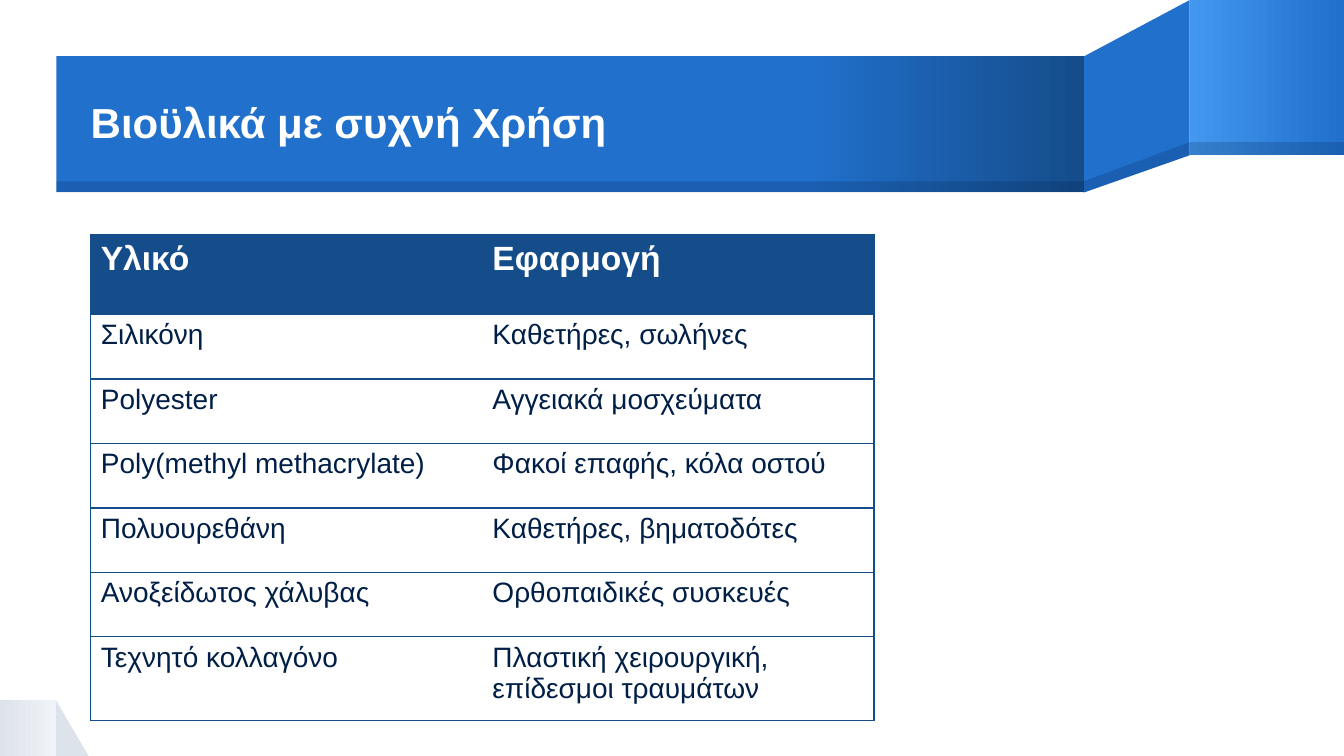
from dataclasses import dataclass

from lxml import etree
from pptx import Presentation
from pptx.dml.color import RGBColor
from pptx.enum.shapes import MSO_SHAPE as Shape
from pptx.enum.text import MSO_ANCHOR as Anchor
from pptx.oxml.ns import qn
from pptx.util import Inches, Pt


@dataclass(frozen=True)
class Theme:
    font: str = "Arial"
    white: str = "FFFFFF"
    blue: str = "2170CC"
    light_blue: str = "4397EE"
    dark_blue: str = "154C8A"
    navy: str = "001F46"
    gray: str = "DDE3EB"
    light_gray: str = "F0F3F7"
    title_size: int = 30
    header_size: int = 24
    body_size: int = 20
    shade_percent: int = 20
    border_width: int = 1


def add_color(parent, color):
    return etree.SubElement(parent, qn("a:srgbClr"), val=color)


class SlideBuilder:
    def __init__(self, slide, theme):
        self.slide = slide
        self.theme = theme

    def paint(self, shape, color, opacity=100):
        shape.shadow.inherit = False
        shape.line.fill.background()
        shape.fill.solid()
        shape.fill.fore_color.rgb = RGBColor.from_string(color)
        if opacity < 100:
            color_node = shape._element.spPr.find(f"{qn('a:solidFill')}/{qn('a:srgbClr')}")
            etree.SubElement(color_node, qn("a:alpha"), val=str(opacity * 1000))

    def add_shape(self, box, color, kind=Shape.RECTANGLE, opacity=100):
        shape = self.slide.shapes.add_shape(kind, *map(Inches, box))
        self.paint(shape, color, opacity)
        return shape

    def add_gradient(self, box, stops):
        """Add a rectangle shaded left to right; stops are (percent, color) pairs."""
        shape = self.add_shape(box, stops[0][1])
        shape.fill.gradient()
        shape.fill.gradient_angle = 0
        stop_list = shape._element.spPr.find(f"{qn('a:gradFill')}/{qn('a:gsLst')}")
        for stop in list(stop_list):
            stop_list.remove(stop)
        for percent, color in stops:
            stop = etree.SubElement(stop_list, qn("a:gs"), pos=str(percent * 1000))
            add_color(stop, color)

    def add_polygon(self, points, color, opacity=100):
        corners = [(Inches(x), Inches(y)) for x, y in points]
        builder = self.slide.shapes.build_freeform(*corners[0])
        builder.add_line_segments(corners[1:], close=True)
        self.paint(builder.convert_to_shape(), color, opacity)

    def add_run(self, paragraph, text, size, color, bold=False):
        run = paragraph.add_run()
        run.text = text
        run.font.name = self.theme.font
        run.font.size = Pt(size)
        run.font.bold = bold
        run.font.color.rgb = RGBColor.from_string(color)

    def add_title(self, box, text):
        frame = self.slide.shapes.add_textbox(*map(Inches, box)).text_frame
        frame.word_wrap = True
        frame.vertical_anchor = Anchor.MIDDLE
        frame.margin_left = frame.margin_right = 0
        frame.margin_top = frame.margin_bottom = 0
        paragraph = frame.paragraphs[0]
        paragraph.line_spacing = 0.9
        self.add_run(paragraph, text, self.theme.title_size, self.theme.white, True)

    def set_borders(self, cell, hidden_side):
        """Draw every cell edge except the one between the columns."""
        properties = cell._tc.get_or_add_tcPr()
        for position, side in enumerate("LRTB"):
            line = etree.Element(qn(f"a:ln{side}"), w=str(Pt(self.theme.border_width)))
            if side == hidden_side:
                etree.SubElement(line, qn("a:noFill"))
            else:
                add_color(etree.SubElement(line, qn("a:solidFill")), self.theme.dark_blue)
            properties.insert(position, line)

    def add_table(self, box, rows, row_heights):
        theme = self.theme
        frame = self.slide.shapes.add_table(len(rows), len(rows[0]), *map(Inches, box))
        table = frame.table
        table.horz_banding = False
        for row, height in zip(table.rows, row_heights):
            row.height = Inches(height)
        for row_index, texts in enumerate(rows):
            is_header = row_index == 0
            size = theme.header_size if is_header else theme.body_size
            color = theme.white if is_header else theme.navy
            for column_index, text in enumerate(texts):
                cell = table.cell(row_index, column_index)
                if is_header:
                    cell.fill.solid()
                    cell.fill.fore_color.rgb = RGBColor.from_string(theme.dark_blue)
                else:
                    cell.fill.background()
                self.set_borders(cell, "RL"[column_index])
                self.add_run(cell.text_frame.paragraphs[0], text, size, color, is_header)


def add_corner(builder):
    theme = builder.theme
    builder.add_shape((0.55, 6.94, 0.33, 0.56), theme.gray, Shape.RIGHT_TRIANGLE)
    builder.add_gradient((0, 6.94, 0.56, 0.56), [(0, theme.gray), (100, theme.light_gray)])


def add_ribbon(builder):
    theme = builder.theme
    left, fold, back = 0.56, 10.75, 11.8
    front_top, front_shade, front_bottom = 0.56, 1.8, 1.91
    back_top, back_shade, back_bottom = 0, 1.41, 1.54
    front_width, back_width = fold - left, 13.33 - back

    def fold_points(back_edge, front_edge):
        return [(back, back_edge), (fold, front_edge), (fold, front_bottom), (back, back_bottom)]

    builder.add_polygon(fold_points(back_top, front_top), theme.blue)
    builder.add_gradient((back, back_top, back_width, back_bottom - back_top),
                         [(0, theme.light_blue), (100, theme.blue)])
    builder.add_gradient((left, front_top, front_width, front_bottom - front_top),
                         [(0, theme.blue), (73, theme.blue), (100, theme.dark_blue)])

    builder.add_polygon(fold_points(back_shade, front_shade), theme.navy, theme.shade_percent)
    for box in ((back, back_shade, back_width, back_bottom - back_shade),
                (left, front_shade, front_width, front_bottom - front_shade)):
        builder.add_shape(box, theme.navy, opacity=theme.shade_percent)


def main():
    presentation = Presentation()
    presentation.slide_width = Inches(13.33)
    presentation.slide_height = Inches(7.5)
    slide = presentation.slides.add_slide(presentation.slide_layouts[6])
    builder = SlideBuilder(slide, Theme())

    add_corner(builder)
    add_ribbon(builder)
    builder.add_title((0.9, 0.57, 9.85, 1.34), "Βιοϋλικά με συχνή Xρήση")

    materials = [
        ("Υλικό", "Εφαρμογή"),
        ("Σιλικόνη", "Καθετήρες, σωλήνες"),
        ("Polyester", "Αγγειακά μοσχεύματα"),
        ("Poly(methyl methacrylate)", "Φακοί επαφής, κόλα οστού"),
        ("Πολυουρεθάνη", "Καθετήρες, βηματοδότες"),
        ("Ανοξείδωτος χάλυβας", "Ορθοπαιδικές συσκευές"),
        ("Τεχνητό κολλαγόνο", "Πλαστική χειρουργική, επίδεσμοι τραυμάτων"),
    ]
    row_heights = [0.79] + [0.64] * 5 + [0.83]
    builder.add_table((0.9, 2.33, 7.77, 4.83), materials, row_heights)
    presentation.save("out.pptx")


if __name__ == "__main__":
    main()
